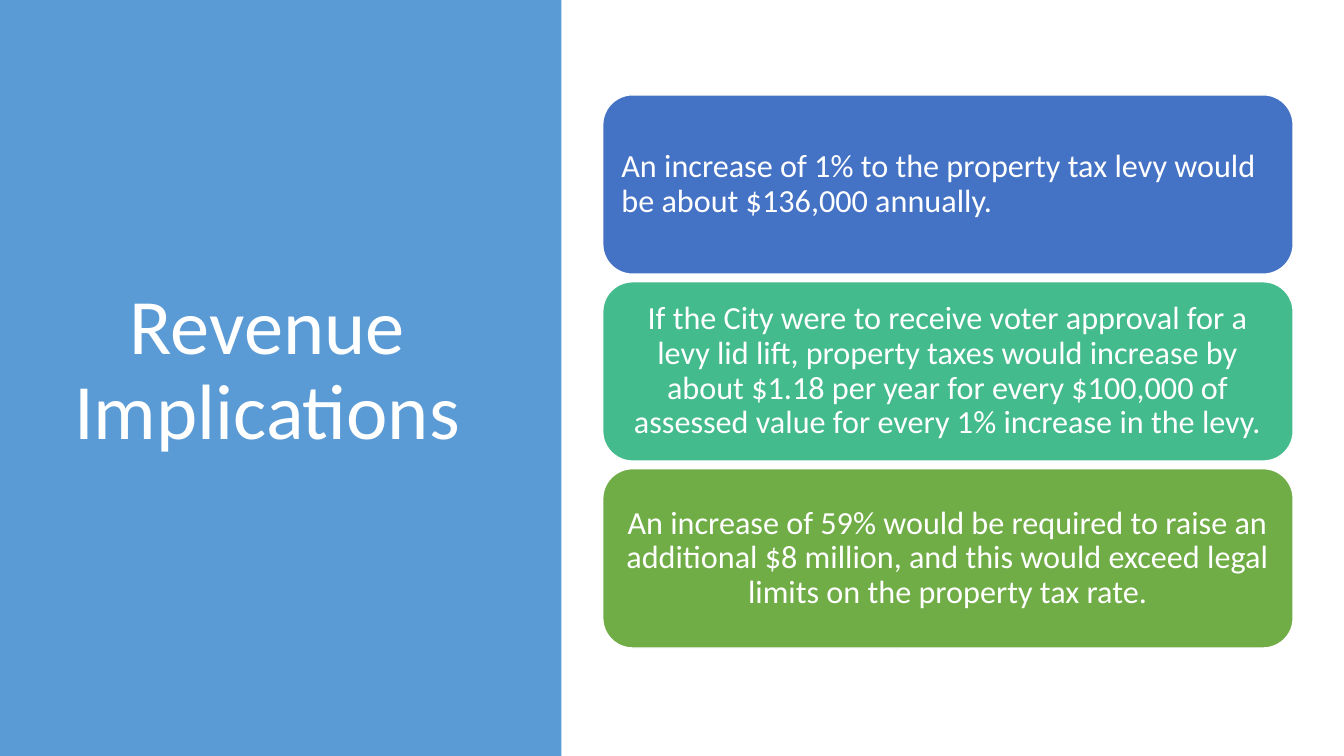
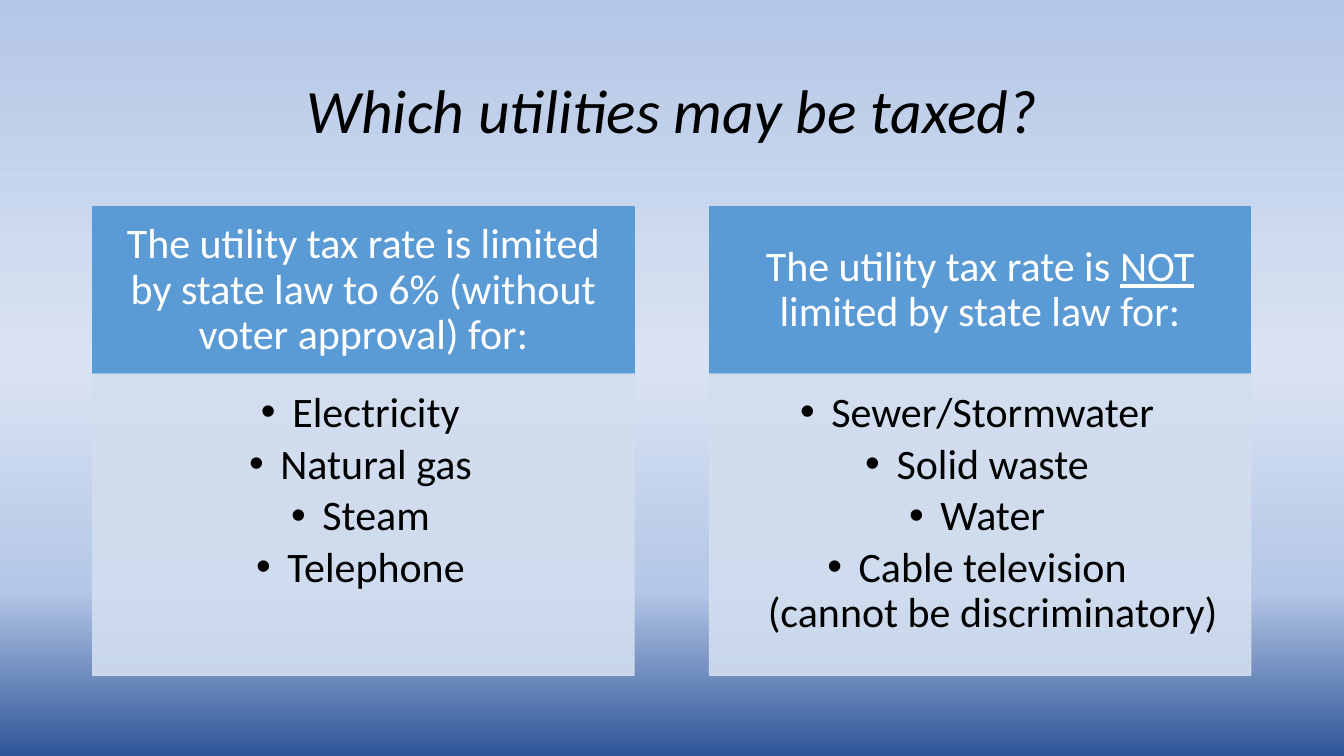
from lxml.etree import SubElement
from pptx import Presentation
from pptx.dml.color import RGBColor
from pptx.enum.shapes import MSO_SHAPE
from pptx.enum.text import MSO_ANCHOR, PP_ALIGN
from pptx.oxml.ns import qn
from pptx.util import Cm, Pt

COLORS = {
    "white": "FFFFFF",
    "black": "000000",
    "accent": "5B9BD5",
    "levy": "4472C4",
    "lid": "43BB8D",
    "limit": "70AD47",
    "list": "D2DEEF",
    "sky": "B4C7E7",
    "haze": "DAE3F3",
    "deep": "2F5597",
}
FONT = "Calibri"
SLIDE_SIZE = (33.87, 19.05)
BACKDROP = [(0, "sky"), (48, "haze"), (78, "sky"), (100, "deep")]

IMPLICATIONS = [
    ("levy", PP_ALIGN.LEFT,
     "An increase of 1% to the property tax levy would be about $136,000 annually."),
    ("lid", PP_ALIGN.CENTER,
     "If the City were to receive voter approval for a levy lid lift, property taxes "
     "would increase by about $1.18 per year for every $100,000 of assessed value "
     "for every 1% increase in the levy."),
    ("limit", PP_ALIGN.CENTER,
     "An increase of 59% would be required to raise an additional $8 million, and "
     "this would exceed legal limits on the property tax rate."),
]
UTILITIES = [
    ([("The utility tax rate is limited by state law to 6% (without voter approval) for:", {})],
     ["Electricity", "Natural gas", "Steam", "Telephone"]),
    ([("The utility tax rate is ", {}), ("NOT", {"underline": True}),
      (" limited by state law for:", {})],
     ["Sewer/Stormwater", "Solid waste", "Water",
      "Cable television\v(cannot be discriminatory)"]),
]


def rgb(color):
    return RGBColor.from_string(COLORS[color])


def apply_format(target, values):
    for name, value in values.items():
        setattr(target, name, value)


def set_frame(frame, insets, anchor):
    sides = ("margin_left", "margin_top", "margin_right", "margin_bottom")
    apply_format(frame, {"word_wrap": True, "vertical_anchor": anchor})
    apply_format(frame, dict(zip(sides, map(Cm, insets))))


def write(paragraph, pieces, size, color, align=PP_ALIGN.CENTER, space=0, **style):
    apply_format(paragraph, {"alignment": align, "line_spacing": 0.9,
                             "space_after": Pt(space)})
    for text, emphasis in pieces:
        for number, line in enumerate(text.split("\v")):
            if number:
                paragraph.add_line_break()
            run = paragraph.add_run()
            run.text = line
            apply_format(run.font, {"name": FONT, "size": Pt(size), **style, **emphasis})
            run.font.color.rgb = rgb(color)


def add_bullet(paragraph):
    properties = paragraph._p.get_or_add_pPr()
    properties.set("marL", str(Cm(0.79)))
    properties.set("indent", str(-Cm(0.79)))
    SubElement(properties, qn("a:buFont"), typeface="Arial")
    SubElement(properties, qn("a:buChar"), char="•")


def add_title(slide, place, text, size, color, **style):
    title = slide.shapes.add_textbox(*map(Cm, place)).text_frame
    set_frame(title, (0.25, 0.13, 0.25, 0.13), MSO_ANCHOR.MIDDLE)
    write(title.paragraphs[0], [(text, {})], size, color, **style)


def add_block(slide, place, fill, line=None, kind=MSO_SHAPE.RECTANGLE, opacity=100):
    block = slide.shapes.add_shape(kind, *map(Cm, place))
    block.shadow.inherit = False
    block.fill.solid()
    block.fill.fore_color.rgb = rgb(fill)
    if line:
        block.line.color.rgb = rgb(line)
        block.line.width = Pt(1)
    else:
        block.line.fill.background()
    if opacity < 100:
        for tint in block._element.spPr.iter(qn("a:srgbClr")):
            SubElement(tint, qn("a:alpha"), val=str(opacity * 1000))
    return block.text_frame


def set_backdrop(slide, stops):
    fill = slide.background.fill
    fill.gradient()
    fill.gradient_angle = 270
    scale = next(slide._element.iter(qn("a:gsLst")))
    scale.clear()
    for position, color in stops:
        stop = SubElement(scale, qn("a:gs"), pos=str(position * 1000))
        SubElement(stop, qn("a:srgbClr"), val=COLORS[color])


def add_utility_column(slide, left, heading, utilities):
    width, top, heading_height = 13.64, 5.21, 4.22
    header = add_block(slide, (left, top, width, heading_height), "accent", "accent")
    set_frame(header, (0.58, 0.33, 0.58, 0.33), MSO_ANCHOR.MIDDLE)
    write(header.paragraphs[0], heading, 30, "white")

    body = add_block(slide, (left, top + heading_height, width, 7.59),
                     "list", "list", opacity=90)
    set_frame(body, (0.43, 0.43, 0.58, 0.66), MSO_ANCHOR.TOP)
    for number, utility in enumerate(utilities):
        entry = body.add_paragraph() if number else body.paragraphs[0]
        write(entry, [(utility, {})], 30, "black", space=4.5)
        add_bullet(entry)


def build_revenue(slide):
    add_block(slide, (0, 0, 14.15, SLIDE_SIZE[1]), "accent")
    add_title(slide, (1.45, 1.73, 10.57, 15.27), "Revenue Implications", 56, "white")
    for row, (color, align, text) in enumerate(IMPLICATIONS):
        card = add_block(slide, (15.19, 2.39 + row * 4.71, 17.4, 4.52), color, "white",
                         MSO_SHAPE.ROUNDED_RECTANGLE)
        set_frame(card, (0.25,) * 4, MSO_ANCHOR.MIDDLE)
        write(card.paragraphs[0], [(text, {})], 23, "white", align)


def build_utilities(slide):
    set_backdrop(slide, BACKDROP)
    add_title(slide, (2.34, 1.02, 29.21, 3.68), "Which utilities may be taxed?",
              44, "black", italic=True)
    for column, (heading, utilities) in enumerate(UTILITIES):
        add_utility_column(slide, 2.34 + column * 15.54, heading, utilities)


def main():
    deck = Presentation()
    deck.slide_width, deck.slide_height = map(Cm, SLIDE_SIZE)
    for build in (build_revenue, build_utilities):
        build(deck.slides.add_slide(deck.slide_layouts[6]))
    deck.save("out.pptx")


if __name__ == "__main__":
    main()
